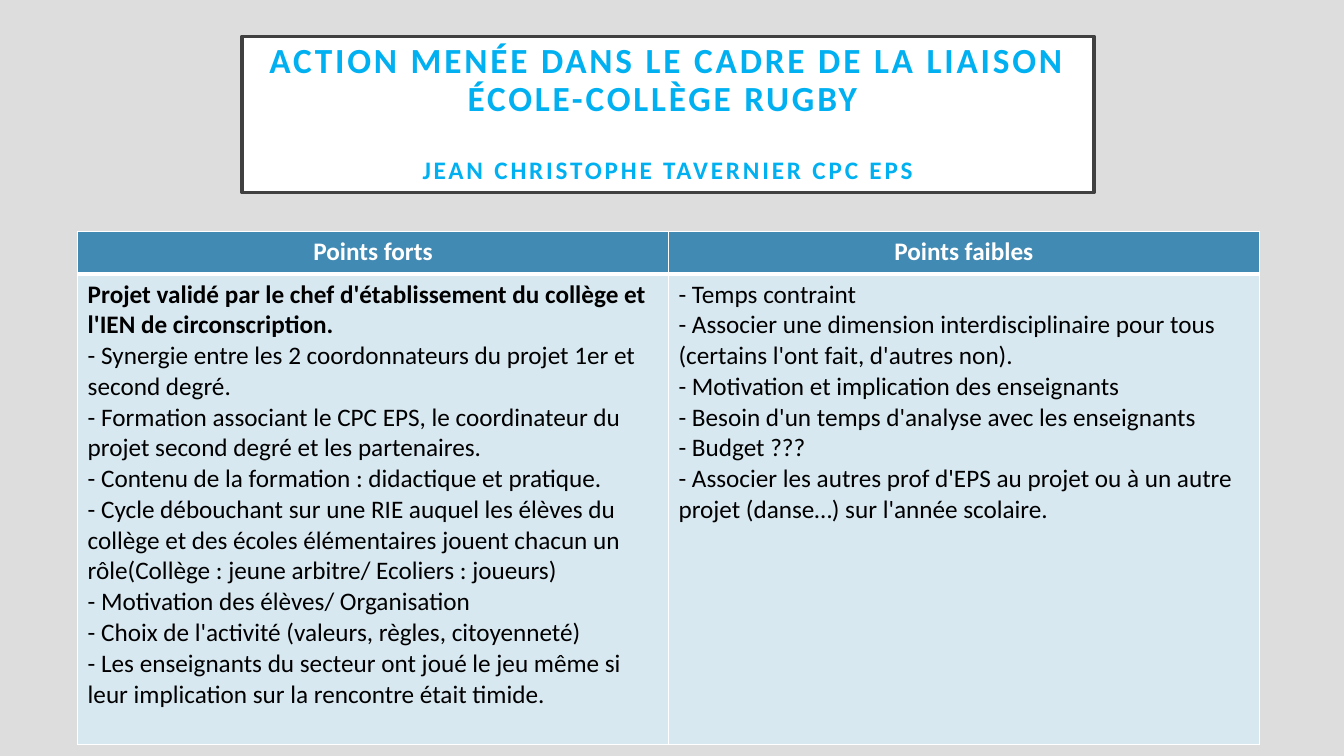
from lxml import etree
from pptx import Presentation
from pptx.dml.color import RGBColor
from pptx.enum.text import MSO_ANCHOR, MSO_AUTO_SIZE, PP_ALIGN
from pptx.oxml.ns import qn
from pptx.util import Inches, Pt

GREY = RGBColor(0xDD, 0xDD, 0xDD)
WHITE = RGBColor(0xFF, 0xFF, 0xFF)
BLACK = RGBColor(0x00, 0x00, 0x00)
DARK = RGBColor(0x40, 0x40, 0x40)
CYAN = RGBColor(0x00, 0xB0, 0xF0)
BLUE = RGBColor(0x41, 0x8A, 0xB3)
PALE_BLUE = RGBColor(0xD8, 0xE8, 0xF1)

TITLE_LINES = [
    ("ACTION MENÉE DANS LE CADRE DE LA LIAISON ÉCOLE-COLLÈGE RUGBY ", 25.2, 0),
    ("JEAN CHRISTOPHE TAVERNIER CPC EPS", 18, 27.5),
]
COLUMNS = {
    "Points forts": [
        "Projet validé par le chef d'établissement du collège et l'IEN de circonscription.",
        "- Synergie entre les 2 coordonnateurs du projet 1er et second degré.",
        "- Formation associant le CPC EPS, le coordinateur du projet second degré et les partenaires.",
        "- Contenu de la formation : didactique et pratique.",
        "- Cycle débouchant sur une RIE auquel les élèves du collège et des écoles élémentaires "
        "jouent chacun un rôle(Collège : jeune arbitre/ Ecoliers : joueurs)",
        "- Motivation des élèves/ Organisation",
        "- Choix de l'activité (valeurs, règles, citoyenneté)",
        "- Les enseignants du secteur ont joué le jeu même si leur implication sur la rencontre "
        "était timide.",
    ],
    "Points faibles": [
        "- Temps contraint",
        "- Associer une dimension interdisciplinaire pour tous (certains l'ont fait, d'autres non).",
        "- Motivation et implication des enseignants",
        "- Besoin d'un temps d'analyse avec les enseignants",
        "- Budget ???",
        "- Associer les autres prof d'EPS au projet ou à un autre projet (danse…) sur l'année scolaire.",
    ],
}


def add_run(p, text, size, color, bold):
    r = p.add_run()
    r.text = text
    for name, value in {"name": "Calibri", "size": Pt(size), "bold": bold}.items():
        setattr(r.font, name, value)
    r.font.color.rgb = color
    return r


def fill_cell(cell, lines, fill, borders, color, align, bold_lines):
    """Write one paragraph per line; borders maps lnL, lnR, lnT, lnB to points."""
    tcPr = cell._tc.get_or_add_tcPr()
    for side, width in borders.items():
        ln = etree.SubElement(tcPr, qn(f"a:{side}"), w=str(Pt(width)))
        solid = etree.SubElement(ln, qn("a:solidFill"))
        etree.SubElement(solid, qn("a:srgbClr"), val=str(WHITE))
    cell.fill.solid()
    cell.fill.fore_color.rgb = fill
    tf = cell.text_frame
    for i, line in enumerate(lines):
        p = tf.add_paragraph() if i else tf.paragraphs[0]
        p.alignment = align
        add_run(p, line, 18, color, i < bold_lines)


prs = Presentation()
prs.slide_width, prs.slide_height = Inches(13.33), Inches(7.5)
s = prs.slides.add_slide(prs.slide_layouts[5])
s.background.fill.solid()
s.background.fill.fore_color.rgb = GREY

# Title
title = s.shapes.title
title.left, title.top = Inches(2.4), Inches(0.36)
title.width, title.height = Inches(8.45), Inches(1.55)
title.fill.solid()
title.fill.fore_color.rgb = WHITE
title.line.color.rgb = DARK
title.line.width = Pt(2.5)
tf = title.text_frame
frame_format = {
    "word_wrap": True,
    "auto_size": MSO_AUTO_SIZE.NONE,
    "vertical_anchor": MSO_ANCHOR.MIDDLE,
    **{f"margin_{side}": Inches(0.2) for side in ("left", "top", "right", "bottom")},
}
for name, value in frame_format.items():
    setattr(tf, name, value)
for i, (text, size, gap) in enumerate(TITLE_LINES):
    p = tf.add_paragraph() if i else tf.paragraphs[0]
    p.alignment = PP_ALIGN.CENTER
    p.line_spacing = 0.9
    p.space_before = Pt(gap)
    r = add_run(p, text, size, CYAN, True)
    r.font._element.set("spc", "200")

# Strengths and weaknesses
table = s.shapes.add_table(
    2, len(COLUMNS), Inches(0.77), Inches(2.3), Inches(11.72), Inches(5.09)
).table
table.rows[0].height, table.rows[1].height = Inches(0.42), Inches(4.67)
thin = {"lnL": 1, "lnR": 1, "lnT": 1, "lnB": 1}
for col, (heading, points) in enumerate(COLUMNS.items()):
    table.columns[col].width = Inches(5.86)
    fill_cell(table.cell(0, col), [heading], BLUE, {**thin, "lnB": 3},
              WHITE, PP_ALIGN.CENTER, 1)
    fill_cell(table.cell(1, col), points, PALE_BLUE, {**thin, "lnT": 3},
              BLACK, PP_ALIGN.LEFT, 1 if col == 0 else 0)

prs.save("out.pptx")
